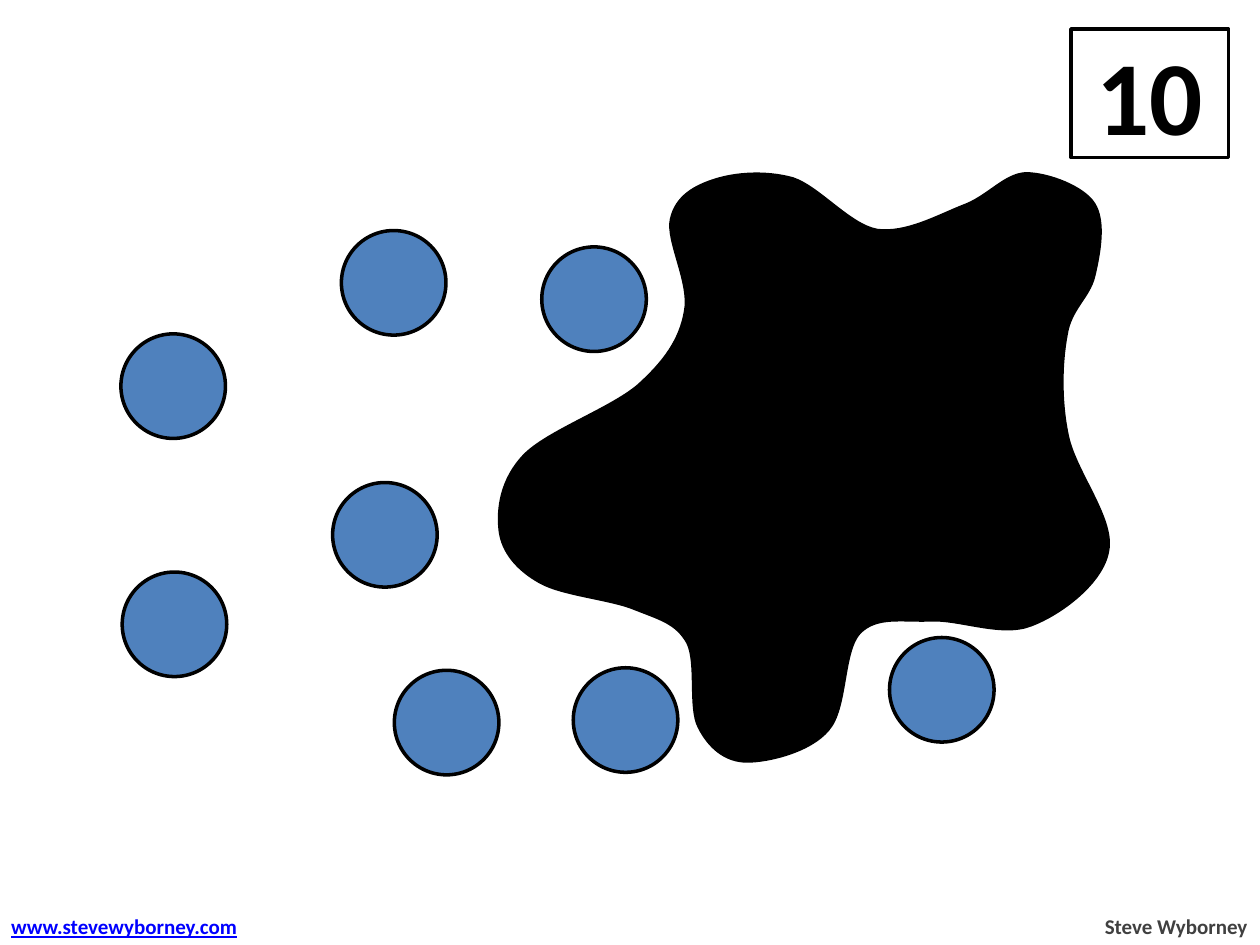
from lxml.etree import Element
from pptx import Presentation
from pptx.dml.color import RGBColor
from pptx.enum.shapes import MSO_SHAPE
from pptx.enum.text import MSO_ANCHOR, MSO_AUTO_SIZE, PP_ALIGN
from pptx.oxml.ns import qn
from pptx.util import Inches, Pt

DOT = 0.83
DOTS = [
    (0.96, 2.65), (4.3, 1.96), (2.71, 1.83), (3.13, 5.32),
    (4.55, 5.3), (2.64, 3.83), (7.06, 5.06), (0.97, 4.54),
]
COUNT = "10"
CREDITS = [
    ("Steve Wyborney", (8.66, 7.2, 1.34, 0.3), PP_ALIGN.RIGHT, "404040", False),
    ("www.stevewyborney.com", (-0.01, 7.2, 2.05, 0.3), PP_ALIGN.LEFT, "0000FF", True),
]

# Splat outline in hundredths of an inch: two control points, then the end
START = (429, 462)
CURVES = [
    (411, 452, 399, 438, 397, 421), (395, 404, 398, 381, 416, 362),
    (434, 343, 485, 325, 507, 306), (528, 287, 540, 270, 544, 248),
    (549, 225, 529, 191, 533, 174), (537, 156, 552, 148, 568, 143),
    (584, 138, 607, 136, 629, 142), (650, 149, 674, 179, 696, 183),
    (719, 186, 744, 172, 764, 164), (784, 157, 797, 139, 814, 138),
    (832, 138, 860, 149, 868, 162), (877, 176, 872, 202, 868, 219),
    (864, 236, 849, 245, 846, 266), (842, 287, 841, 318, 847, 346),
    (853, 375, 884, 412, 879, 437), (875, 462, 842, 487, 818, 496),
    (795, 505, 762, 491, 739, 492), (716, 493, 696, 488, 682, 502),
    (668, 517, 672, 562, 657, 579), (643, 596, 610, 604, 593, 604),
    (576, 604, 563, 593, 555, 577), (547, 562, 554, 526, 546, 510),
    (537, 494, 524, 491, 504, 483), (485, 475, 447, 472, 429, 462),
]


def color(code):
    return RGBColor.from_string(code)


def paint(shape, fill):
    shape.shadow.inherit = False
    shape.fill.solid()
    shape.fill.fore_color.rgb = color(fill)
    shape.line.color.rgb = color("000000")
    shape.line.width = Pt(2)


def write(frame, text, size, code, align):
    para = frame.paragraphs[0]
    para.text = text
    para.alignment = align
    font = para.font
    font.name, font.size, font.bold = "Calibri", Pt(size), True
    font.color.rgb = color(code)
    return font


def add_splat(shapes):
    """Draw the outline with straight segments, then bend each into a curve."""
    ends = [curve[4:] for curve in CURVES]
    pen = shapes.build_freeform(*START, scale=Inches(0.01))
    pen.add_line_segments(ends, close=True)
    splat = pen.convert_to_shape()
    left = min(x for x, y in ends)
    top = min(y for x, y in ends)
    lines = list(splat.element.iter(qn("a:lnTo")))
    for line, (ax, ay, bx, by, *end) in zip(lines, CURVES):
        line.tag = qn("a:cubicBezTo")
        for i, (x, y) in enumerate([(ax, ay), (bx, by)]):
            line.insert(i, Element(qn("a:pt"), x=str(x - left), y=str(y - top)))
    paint(splat, "000000")


prs = Presentation()
prs.slide_width, prs.slide_height = Inches(10), Inches(7.5)
shapes = prs.slides.add_slide(prs.slide_layouts[6]).shapes

for x, y in DOTS:
    dot = shapes.add_shape(MSO_SHAPE.OVAL, *map(Inches, (x, y, DOT, DOT)))
    paint(dot, "4F81BD")

for text, area, align, code, under in CREDITS:
    frame = shapes.add_textbox(*map(Inches, area)).text_frame
    frame.word_wrap = False
    frame.auto_size = MSO_AUTO_SIZE.SHAPE_TO_FIT_TEXT
    write(frame, text, 12, code, align).underline = under

box = shapes.add_shape(MSO_SHAPE.RECTANGLE, *map(Inches, (8.5, 0.23, 1.25, 1.02)))
paint(box, "FFFFFF")
box.text_frame.vertical_anchor = MSO_ANCHOR.MIDDLE
write(box.text_frame, COUNT, 60, "000000", PP_ALIGN.CENTER)

add_splat(shapes)
prs.save("out.pptx")
